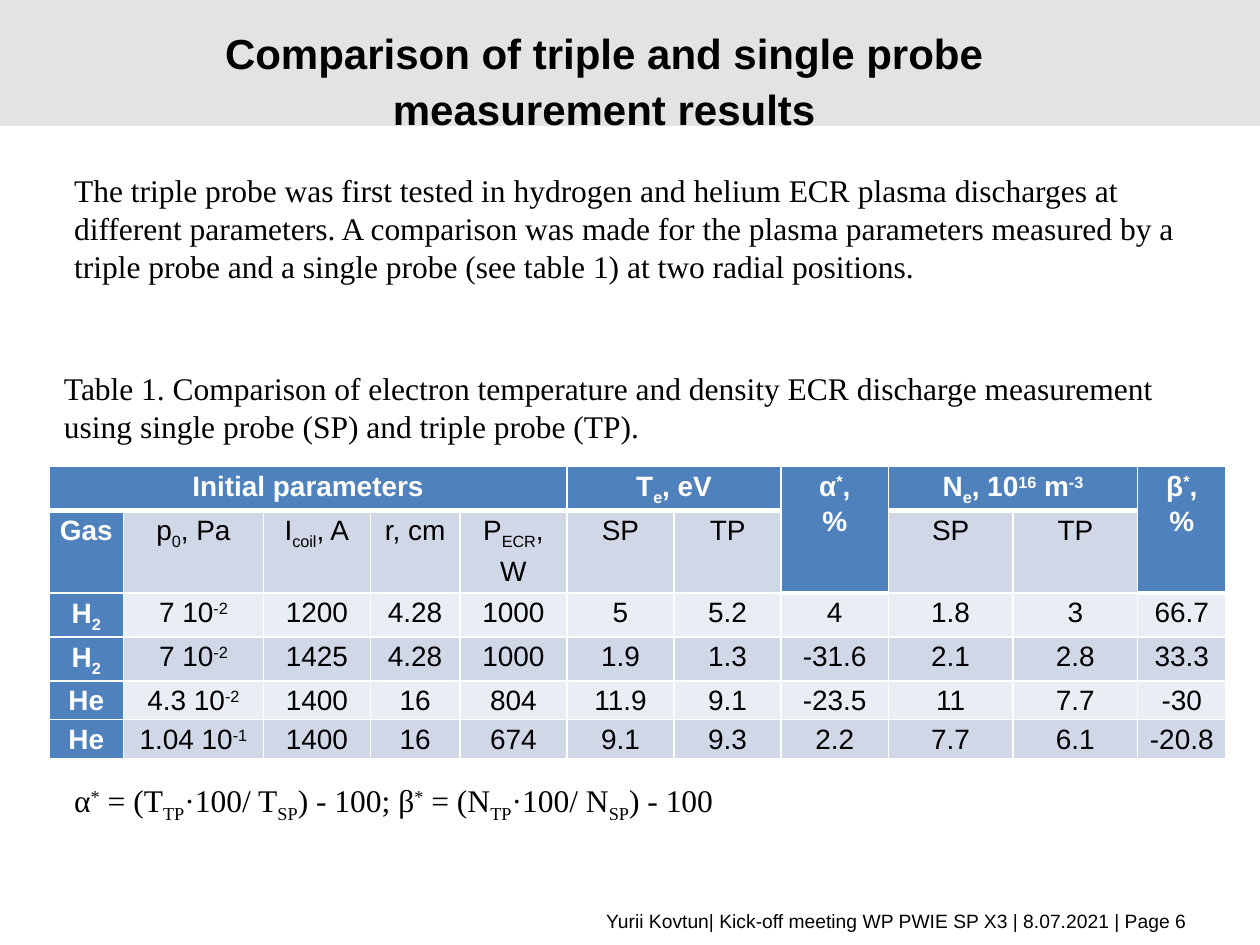
from lxml import etree
from pptx import Presentation
from pptx import util as u
from pptx.dml.color import RGBColor
from pptx.enum import shapes, text
from pptx.oxml.ns import qn

WIDTH, HEIGHT = 10, 7.5
COLORS = {
    "band": "E3E3E3", "header": "4F81BD", "dark_row": "D0D8E8",
    "light_row": "E9EDF4", "white": "FFFFFF", "black": "000000",
}
SERIF, SANS = "Times New Roman", "Arial"
BASELINES = {"_": "-25000", "^": "30000"}
COLUMN_WIDTHS = [0.59, 1.11, 0.85, 0.71, 0.85, 0.85, 0.85, 0.85, 0.99, 0.99, 0.7]
ROW_HEIGHTS = [0.35, 0.65, 0.35, 0.35, 0.3, 0.3]
MERGES = [(0, 0, 0, 4), (0, 5, 0, 6), (0, 7, 1, 7), (0, 8, 0, 9), (0, 10, 1, 10)]
ROWS = [
    ["Initial parameters", "", "", "", "", "T{_e}, eV", "", "α{^*},\n%",
     "N{_e}, 10{^16} m{^-3}", "", "β{^*},\n%"],
    ["Gas", "p{_0}, Pa", "I{_coil}, A", "r, cm", "P{_ECR}, W", "SP", "TP", "",
     "SP", "TP", ""],
    ["H{_2}", "7 10{^-2}", "1200", "4.28", "1000", "5", "5.2", "4", "1.8", "3", "66.7"],
    ["H{_2}", "7 10{^-2}", "1425", "4.28", "1000", "1.9", "1.3", "-31.6", "2.1", "2.8", "33.3"],
    ["He", "4.3 10{^-2}", "1400", "16", "804", "11.9", "9.1", "-23.5", "11", "7.7", "-30"],
    ["He", "1.04 10{^-1}", "1400", "16", "674", "9.1", "9.3", "2.2", "7.7", "6.1", "-20.8"],
]


def color(name):
    return RGBColor.from_string(COLORS[name])


def write_text(frame, content, size=18, font=SERIF, fill="black", bold=False,
               align="LEFT", spacing=None, after=None):
    for index, line in enumerate(content.split("\n")):
        paragraph = frame.add_paragraph() if index else frame.paragraphs[0]
        paragraph.alignment = getattr(text.PP_ALIGN, align)
        paragraph.line_spacing = spacing
        paragraph.space_after = after
        for position, part in enumerate(line.replace("}", "{").split("{")):
            if not part:
                continue
            raised = position % 2 == 1
            run = paragraph.add_run()
            run.text = part[1:] if raised else part
            run.font.name = font
            run.font.size = u.Pt(size)
            run.font.bold = bold
            run.font.color.rgb = color(fill)
            if raised:
                run.font._element.set("baseline", BASELINES[part[0]])


def add_text(slide, box, content, anchor="TOP", **style):
    shape = slide.shapes.add_textbox(*map(u.Inches, box))
    frame = shape.text_frame
    frame.word_wrap = True
    frame.vertical_anchor = getattr(text.MSO_ANCHOR, anchor)
    write_text(frame, content, **style)


def add_band(slide):
    band = slide.shapes.add_shape(shapes.MSO_SHAPE.RECTANGLE, 0, 0,
                                  u.Inches(WIDTH), u.Inches(1))
    band.shadow.inherit = False
    band.fill.solid()
    band.fill.fore_color.rgb = color("band")
    band.line.fill.background()


def set_borders(cell, bottom):
    properties = cell._tc.get_or_add_tcPr()
    for side, points in (("L", 1), ("R", 1), ("T", 1), ("B", bottom)):
        line = etree.SubElement(properties, qn(f"a:ln{side}"), w=str(u.Pt(points)))
        solid = etree.SubElement(line, qn("a:solidFill"))
        etree.SubElement(solid, qn("a:srgbClr"), val=COLORS["white"])


def add_results_table(slide):
    frame = slide.shapes.add_table(
        len(ROWS), len(COLUMN_WIDTHS), u.Inches(0.39), u.Inches(3.7),
        u.Inches(sum(COLUMN_WIDTHS)), u.Inches(sum(ROW_HEIGHTS)))
    table = frame.table
    for column, width in zip(table.columns, COLUMN_WIDTHS):
        column.width = u.Inches(width)
    for row, height in zip(table.rows, ROW_HEIGHTS):
        row.height = u.Inches(height)
    for top, left, bottom, right in MERGES:
        table.cell(top, left).merge(table.cell(bottom, right))
    for r, values in enumerate(ROWS):
        for c, value in enumerate(values):
            cell = table.cell(r, c)
            header = r == 0 or c == 0 or (r == 1 and not value)
            cell.margin_left = cell.margin_right = u.Inches(0.07)
            cell.margin_top = cell.margin_bottom = 0
            set_borders(cell, 3 if r == 0 else 1)
            cell.fill.solid()
            cell.fill.fore_color.rgb = color(
                "header" if header else "dark_row" if r % 2 else "light_row")
            if value:
                write_text(cell.text_frame, value, size=16, font=SANS, bold=header,
                           fill="white" if header else "black",
                           align="CENTER", spacing=1.15)


def main():
    presentation = Presentation()
    presentation.slide_width = u.Inches(WIDTH)
    presentation.slide_height = u.Inches(HEIGHT)
    slide = presentation.slides.add_slide(presentation.slide_layouts[6])
    add_band(slide)
    add_text(slide, (0.67, 0.2, 8.25, 0.84),
             "Comparison of triple and single probe measurement results",
             anchor="MIDDLE", size=24, font=SANS, bold=True, align="CENTER",
             spacing=u.Pt(32))
    add_text(slide, (0.51, 7.16, 9.01, 0.29),
             "Yurii Kovtun| Kick-off meeting WP PWIE SP X3 | 8.07.2021 | Page 6",
             anchor="MIDDLE", size=11, font=SANS, align="RIGHT")
    add_text(slide, (0.49, 1.31, 9.13, 1.31),
             "The triple probe was first tested in hydrogen and helium ECR plasma "
             "discharges at different parameters. A comparison was made for the plasma "
             "parameters measured by a triple probe and a single probe (see table 1) "
             "at two radial positions.")
    add_results_table(slide)
    add_text(slide, (0.41, 2.88, 9.37, 0.71),
             "Table 1. Comparison of electron temperature and density ECR discharge "
             "measurement using single probe (SP) and triple probe (TP).")
    add_text(slide, (0.49, 6.1, 5.61, 0.45),
             "α{^*} = (T{_TP}·100/ T{_SP}) - 100; β{^*} = (N{_TP}·100/ N{_SP}) - 100",
             align="JUSTIFY", spacing=1.15, after=u.Pt(10))
    presentation.save("out.pptx")


if __name__ == "__main__":
    main()
